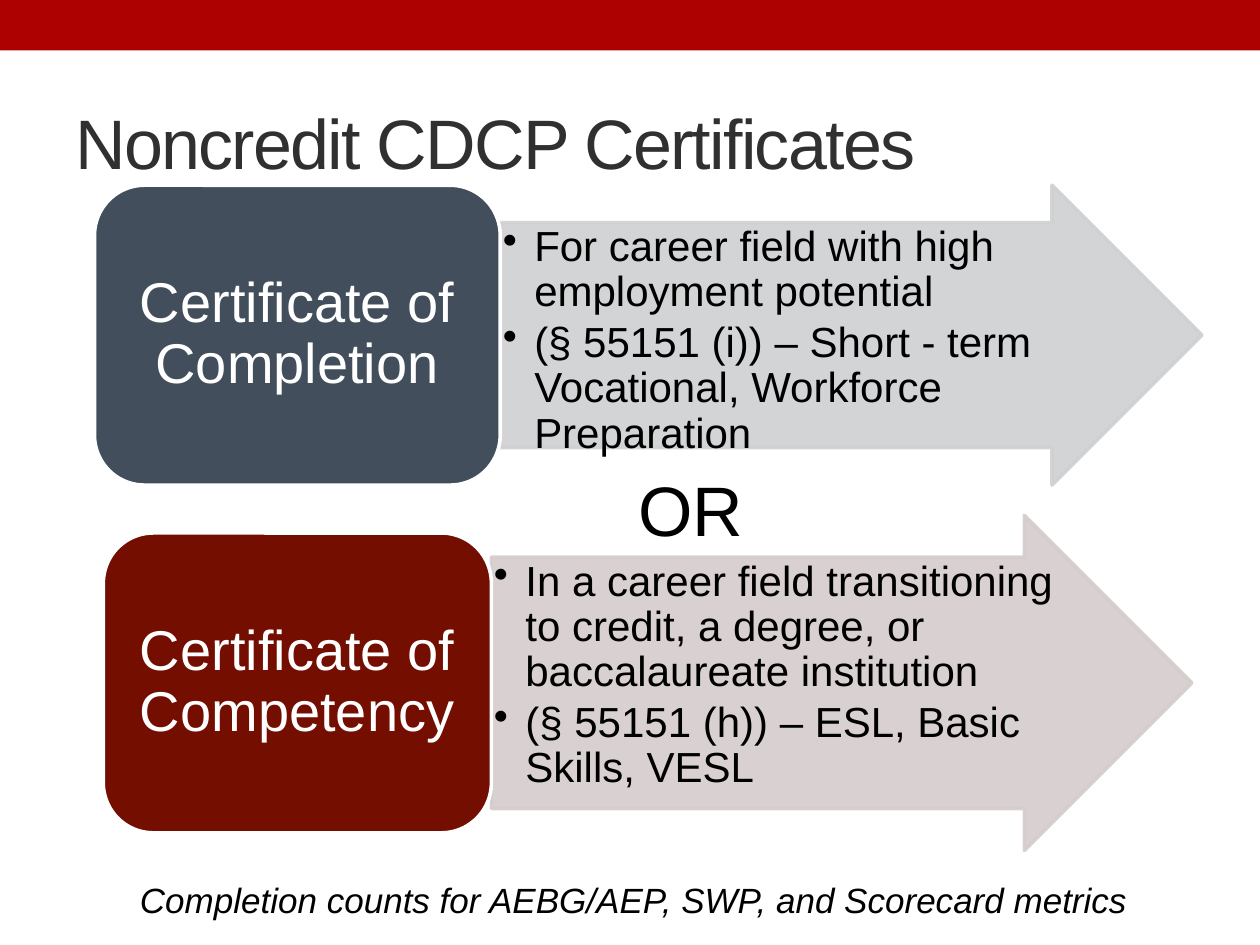
"""Build the slide that contrasts two kinds of noncredit certificate."""
from lxml.etree import SubElement
from pptx import Presentation
from pptx.dml.color import RGBColor
from pptx.enum.shapes import MSO_SHAPE
from pptx.enum.text import MSO_ANCHOR, PP_ALIGN
from pptx.oxml.ns import qn
from pptx.util import Inches, Pt

RED = RGBColor(0xAD, 0x01, 0x01)
CHARCOAL = RGBColor(0x30, 0x30, 0x30)
BLACK = RGBColor(0x00, 0x00, 0x00)
WHITE = RGBColor(0xFF, 0xFF, 0xFF)
SLATE = RGBColor(0x42, 0x4E, 0x5B)
PALE_SLATE = RGBColor(0xCF, 0xD0, 0xD2)
MAROON = RGBColor(0x73, 0x0E, 0x00)
PALE_MAROON = RGBColor(0xD5, 0xCC, 0xCC)

TITLE = "Noncredit CDCP Certificates"
CERTIFICATES = [
    {
        "name": "Certificate of Completion",
        "points": [
            "For career field with high employment potential",
            "(§ 55151 (i)) – Short - term Vocational, Workforce Preparation",
        ],
        "label": (0.75, 1.47, 3.22, 2.38),
        "arrow": (3.97, 1.47, 5.57, 2.38),
        "colors": (SLATE, PALE_SLATE),
    },
    {
        "name": "Certificate of Competency",
        "points": [
            "In a career field transitioning to credit, a degree, or baccalaureate institution",
            "(§ 55151 (h)) – ESL, Basic Skills, VESL",
        ],
        "label": (0.82, 4.23, 3.08, 2.38),
        "arrow": (3.9, 4.09, 5.56, 2.66),
        "colors": (MAROON, PALE_MAROON),
    },
]
FOOTNOTE = "Completion counts for AEBG/AEP, SWP, and Scorecard metrics"

TITLE_FONT = {"size": Pt(40)}
LABEL_FONT = {"size": Pt(32)}
POINT_FONT = {"size": Pt(24)}
NOTE_FONT = {"size": Pt(20), "italic": True}
CENTERED = {"alignment": PP_ALIGN.CENTER}
LABEL_PARA = {"alignment": PP_ALIGN.CENTER, "line_spacing": 0.9}
POINT_PARA = {"alignment": PP_ALIGN.LEFT, "line_spacing": 0.9, "space_after": Pt(3)}

SHAFT_SHARE = 0.75
HEAD_SHARE = 0.5
LABEL_INSET = 0.11
BULLET_INDENT = 0.25


def apply(target, values):
    for name, value in values.items():
        setattr(target, name, value)


def add_shape(page, kind, area, fill, line=None):
    shape = page.shapes.add_shape(kind, *map(Inches, area))
    shape.shadow.inherit = False
    shape.fill.solid()
    shape.fill.fore_color.rgb = fill
    if line is None:
        shape.line.fill.background()
    else:
        shape.line.color.rgb = line
        shape.line.width = Pt(2.08)
    return shape


def add_text(page, area, texts, font, para_format, color=BLACK,
             anchor=MSO_ANCHOR.TOP, insets=(0.1, 0.05)):
    box = page.shapes.add_textbox(*map(Inches, area))
    across, down = map(Inches, insets)
    apply(box.text_frame, {
        "word_wrap": True, "vertical_anchor": anchor,
        "margin_left": across, "margin_right": across,
        "margin_top": down, "margin_bottom": down,
    })
    box.text_frame.text = "\n".join(texts)
    for para in box.text_frame.paragraphs:
        apply(para, para_format)
        for span in para.runs:
            apply(span.font, {"name": "Arial", **font})
            span.font.color.rgb = color
    return box


def add_bullets(box):
    for para in box.text_frame.paragraphs:
        properties = para._p.get_or_add_pPr()
        properties.set("marL", str(Inches(BULLET_INDENT)))
        properties.set("indent", str(-Inches(BULLET_INDENT)))
        SubElement(properties, qn("a:buChar"), char="•")


def add_certificate(page, certificate):
    strong, pale = certificate["colors"]
    left, top, width, height = certificate["arrow"]
    arrow = add_shape(page, MSO_SHAPE.RIGHT_ARROW, certificate["arrow"], pale, pale)
    arrow.adjustments[0] = SHAFT_SHARE
    arrow.adjustments[1] = HEAD_SHARE
    for color in arrow._element.spPr.iter(qn("a:srgbClr")):
        SubElement(color, qn("a:alpha"), val="90000")

    shaft = height * SHAFT_SHARE
    head = height * HEAD_SHARE
    text_area = (left, top + (height - shaft) / 2, width - head * SHAFT_SHARE, shaft)
    add_bullets(add_text(page, text_area, certificate["points"], POINT_FONT,
                         POINT_PARA, insets=(0.02, 0.02)))

    left, top, width, height = certificate["label"]
    add_shape(page, MSO_SHAPE.ROUNDED_RECTANGLE, certificate["label"], strong, WHITE)
    inner = (left + LABEL_INSET, top + LABEL_INSET,
             width - 2 * LABEL_INSET, height - 2 * LABEL_INSET)
    add_text(page, inner, [certificate["name"]], LABEL_FONT, LABEL_PARA, WHITE,
             MSO_ANCHOR.MIDDLE, (0.13, 0.07))


def main():
    deck = Presentation()
    deck.slide_width, deck.slide_height = Inches(10), Inches(7.5)
    page = deck.slides.add_slide(deck.slide_layouts[6])

    add_shape(page, MSO_SHAPE.RECTANGLE, (0, 0, 10, 0.4), RED)
    title = add_text(page, (0.5, 0.58, 9, 1.08), [TITLE], TITLE_FONT, {},
                     CHARCOAL, MSO_ANCHOR.MIDDLE)
    title.text_frame.paragraphs[0].runs[0].font._element.set("spc", "-100")
    for certificate in CERTIFICATES:
        add_certificate(page, certificate)
    add_text(page, (0.28, 6.92, 9.5, 0.44), [FOOTNOTE], NOTE_FONT, CENTERED)
    add_text(page, (4.57, 3.65, 1.98, 0.77), ["OR "], TITLE_FONT, CENTERED)
    deck.save("out.pptx")


if __name__ == "__main__":
    main()
